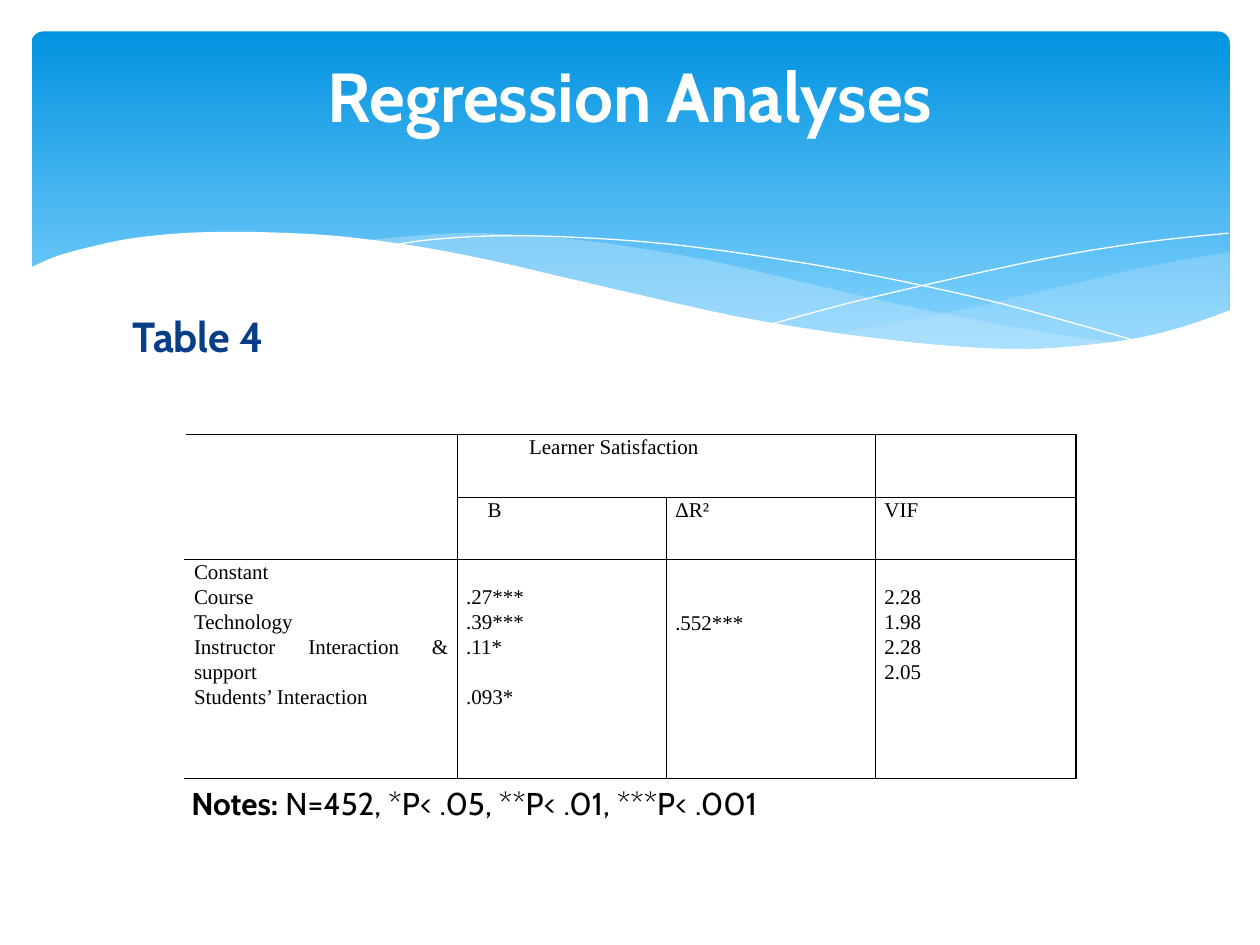
"""Build the regression analyses slide with its wave banner and results table."""
from lxml import etree
from pptx import Presentation
from pptx.dml.color import RGBColor
from pptx.enum.shapes import MSO_SHAPE
from pptx.enum.text import MSO_ANCHOR, PP_ALIGN
from pptx.oxml.ns import qn
from pptx.util import Inches, Pt

ROUNDED = MSO_SHAPE.ROUNDED_RECTANGLE
TOP = MSO_ANCHOR.TOP
LEFT, CENTER, JUSTIFY = PP_ALIGN.LEFT, PP_ALIGN.CENTER, PP_ALIGN.JUSTIFY

COLORS = {"deep": "0293E0", "sky": "83D3FE", "mist": "C6E7FC", "white": "FFFFFF",
          "navy": "073E87", "black": "000000"}
HEADING_FONT, TABLE_FONT = "Cabin", "Times New Roman"

RIGHT_SWELL = [
    [(9.76, 2), (9.35, 2.07), (8.91, 2.16), (8.32, 2.3), (7.53, 2.48), (6.61, 2.65)],
    [(6.61, 2.65), (7.05, 2.71), (7.57, 2.76), (8.14, 2.78), (8.72, 2.74),
     (9.21, 2.65), (9.76, 2.47)],
]
MIDDLE_SWELL = [
    [(8.93, 2.73), (8.37, 2.65), (7.75, 2.54), (7.06, 2.4), (6.29, 2.22), (5.69, 2.08),
     (5.14, 1.98), (4.65, 1.91), (4.2, 1.87), (3.61, 1.85), (2.86, 1.91)],
    [(2.86, 1.91), (3.42, 1.99), (4.04, 2.11), (4.91, 2.32), (5.66, 2.48), (6.34, 2.61),
     (6.95, 2.7), (7.48, 2.76), (8.07, 2.78), (8.57, 2.77), (8.93, 2.73)],
]
FALLING_LINE = [[(3.09, 1.95), (3.44, 1.9), (4.01, 1.87), (4.69, 1.89), (5.33, 1.94),
                 (6.08, 2.04), (6.95, 2.19), (7.95, 2.41), (9.07, 2.72)]]
RISING_LINE = [[(6.13, 2.57), (6.72, 2.41), (7.48, 2.23), (8.36, 2.04), (9.1, 1.92),
                (9.75, 1.85)]]
WHITE_WAVE = [
    [(9.77, 2.46), (9.4, 2.59), (8.99, 2.69), (8.5, 2.75), (8.09, 2.77), (7.61, 2.75),
     (7.08, 2.7), (6.48, 2.62), (5.79, 2.5), (5.03, 2.33), (4.47, 2.2), (3.91, 2.07),
     (3.4, 1.97), (2.92, 1.9), (2.5, 1.86), (1.93, 1.84), (1.46, 1.85), (1.06, 1.89),
     (0.76, 1.95), (0.46, 2.03), (0.23, 2.13)],
    [(0.23, 3.29), (9.77, 3.29)],
]
WAVES = [
    (RIGHT_SWELL, "mist", 29), (MIDDLE_SWELL, "mist", 40),
    (FALLING_LINE, None, 100), (RISING_LINE, None, 100), (WHITE_WAVE, "white", 100),
]

TABLE_AT = (1.47, 3.45)
COLUMN_WIDTHS = [2.16, 1.66, 1.66, 1.59]
ROW_HEIGHTS = [0.5, 0.49, 1.74]
LINE_PITCH = 0.2
CELL_TEXT = {
    (0, 1): ["Learner Satisfaction"],
    (1, 1): ["Β"], (1, 2): ["ΔR²"], (1, 3): ["VIF"],
    (2, 0): ["Constant", "Course", "Technology", "Instructor Interaction & support",
             "Students’ Interaction"],
    (2, 1): [".27***", ".39***", ".11*", ".093*"],
    (2, 2): [".552***"],
    (2, 3): ["2.28", "1.98", "2.28", "2.05"],
}
INDENTS = {(0, 1): 0.5, (1, 1): 0.17}
LINES_ABOVE = {(2, 1): 1, (2, 2): 2, (2, 3): 1}
LINE_GAP_BEFORE = [".093*"]
MERGES = [((0, 0), (1, 0)), ((0, 1), (0, 2))]


def rgb(name):
    return RGBColor.from_string(COLORS[name])


def smooth(knots, steps=5):
    if len(knots) < 3:
        return list(knots)
    ends = [knots[0], *knots, knots[-1]]
    points = []
    for a, b, c, d in zip(ends, ends[1:], ends[2:], ends[3:]):
        for step in range(steps):
            t = step / steps
            points.append(tuple(
                0.5 * (2 * q + (r - p) * t + (2 * p - 5 * q + 4 * r - s) * t ** 2
                       + (3 * q - p - 3 * r + s) * t ** 3)
                for p, q, r, s in zip(a, b, c, d)))
    return points + [knots[-1]]


def add_banner(page):
    banner = page.shapes.add_shape(ROUNDED, Inches(0.25), Inches(0.25),
                                   Inches(9.51), Inches(2.7))
    banner.adjustments[0] = 0.034
    banner.shadow.inherit = False
    banner.line.fill.background()
    banner.fill.gradient()
    banner.fill.gradient_angle = 270
    for stop, name, position in zip(banner.fill.gradient_stops, ("deep", "sky"), (0, 0.9)):
        stop.color.rgb = rgb(name)
        stop.position = position


def add_wave(page, curves, fill, opacity):
    points = [(Inches(x), Inches(y)) for curve in curves for x, y in smooth(curve)]
    builder = page.shapes.build_freeform(*points[0])
    builder.add_line_segments(points[1:], close=fill is not None)
    wave = builder.convert_to_shape()
    wave.shadow.inherit = False
    if fill is None:
        wave.fill.background()
        wave.line.color.rgb = rgb("white")
        wave.line.width = Pt(0)
        return
    wave.line.fill.background()
    wave.fill.solid()
    wave.fill.fore_color.rgb = rgb(fill)
    if opacity < 100:
        color = wave.fill._xPr.find(".//" + qn("a:srgbClr"))
        etree.SubElement(color, qn("a:alpha"), val=str(opacity * 1000))


def style(span, font, size, color, bold=False):
    span.font.name = font
    span.font.size = Pt(size)
    span.font.color.rgb = rgb(color)
    span.font.bold = bold


def add_text(page, at, spans, size, color, align=LEFT, margin_top=0.05, wrap=True):
    box = page.shapes.add_textbox(*map(Inches, at))
    frame = box.text_frame
    frame.word_wrap = wrap
    frame.vertical_anchor = TOP
    frame.margin_top = Inches(margin_top)
    para = frame.paragraphs[0]
    para.alignment = align
    for text, bold in spans:
        span = para.add_run()
        span.text = text
        style(span, HEADING_FONT, size, color, bold)


def set_borders(cell, sides):
    properties = cell._tc.get_or_add_tcPr()
    for index, side in enumerate(sides):
        line = etree.Element(qn("a:ln" + side), w=str(Pt(1)))
        fill = etree.SubElement(line, qn("a:solidFill"))
        etree.SubElement(fill, qn("a:srgbClr"), val=COLORS["black"])
        properties.insert(index, line)


def fill_cell(cell, place):
    cell.fill.background()
    set_borders(cell, "RTB" if place[1] == 0 else "LRTB")
    cell.margin_left = cell.margin_right = Inches(0.07)
    cell.margin_top = Inches(LINES_ABOVE.get(place, 0) * LINE_PITCH)
    cell.margin_bottom = 0
    lines = CELL_TEXT.get(place, [])
    cell.text_frame.text = "\n".join(lines)
    for para, text in zip(cell.text_frame.paragraphs, lines):
        para.alignment = JUSTIFY
        para.line_spacing = 1.07
        if text in LINE_GAP_BEFORE:
            para.space_before = Inches(LINE_PITCH)
        if place in INDENTS:
            para._p.get_or_add_pPr().set("marL", str(Inches(INDENTS[place])))
        for span in para.runs:
            style(span, TABLE_FONT, 12, "black")


def add_results(page):
    size = sum(COLUMN_WIDTHS), sum(ROW_HEIGHTS)
    table = page.shapes.add_table(len(ROW_HEIGHTS), len(COLUMN_WIDTHS),
                                  *map(Inches, TABLE_AT + size)).table
    table.first_row = table.horz_banding = False
    for column, width in zip(table.columns, COLUMN_WIDTHS):
        column.width = Inches(width)
    for row, height in zip(table.rows, ROW_HEIGHTS):
        row.height = Inches(height)
    for first, last in MERGES:
        table.cell(*first).merge(table.cell(*last))
    for row in range(len(ROW_HEIGHTS)):
        for column in range(len(COLUMN_WIDTHS)):
            fill_cell(table.cell(row, column), (row, column))


def main():
    deck = Presentation()
    deck.slide_width, deck.slide_height = Inches(10), Inches(7.5)
    page = deck.slides.add_slide(deck.slide_layouts[6])
    add_banner(page)
    for curves, fill, opacity in WAVES:
        add_wave(page, curves, fill, opacity)
    add_text(page, (0.95, 1.92, 8.1, 5.25), [("Table 4", True)], 24, "navy", margin_top=0.54)
    add_text(page, (0.5, 0.37, 9, 1.37), [("Regression Analyses", True)], 39.6, "white", CENTER)
    add_results(page)
    add_text(page, (1.42, 6.17, 4.76, 0.4),
             [("Notes: ", True), ("N=452, *P< .05, **P< .01, ***P< .001", False)],
             18, "black", wrap=False)
    deck.save("out.pptx")


if __name__ == "__main__":
    main()
